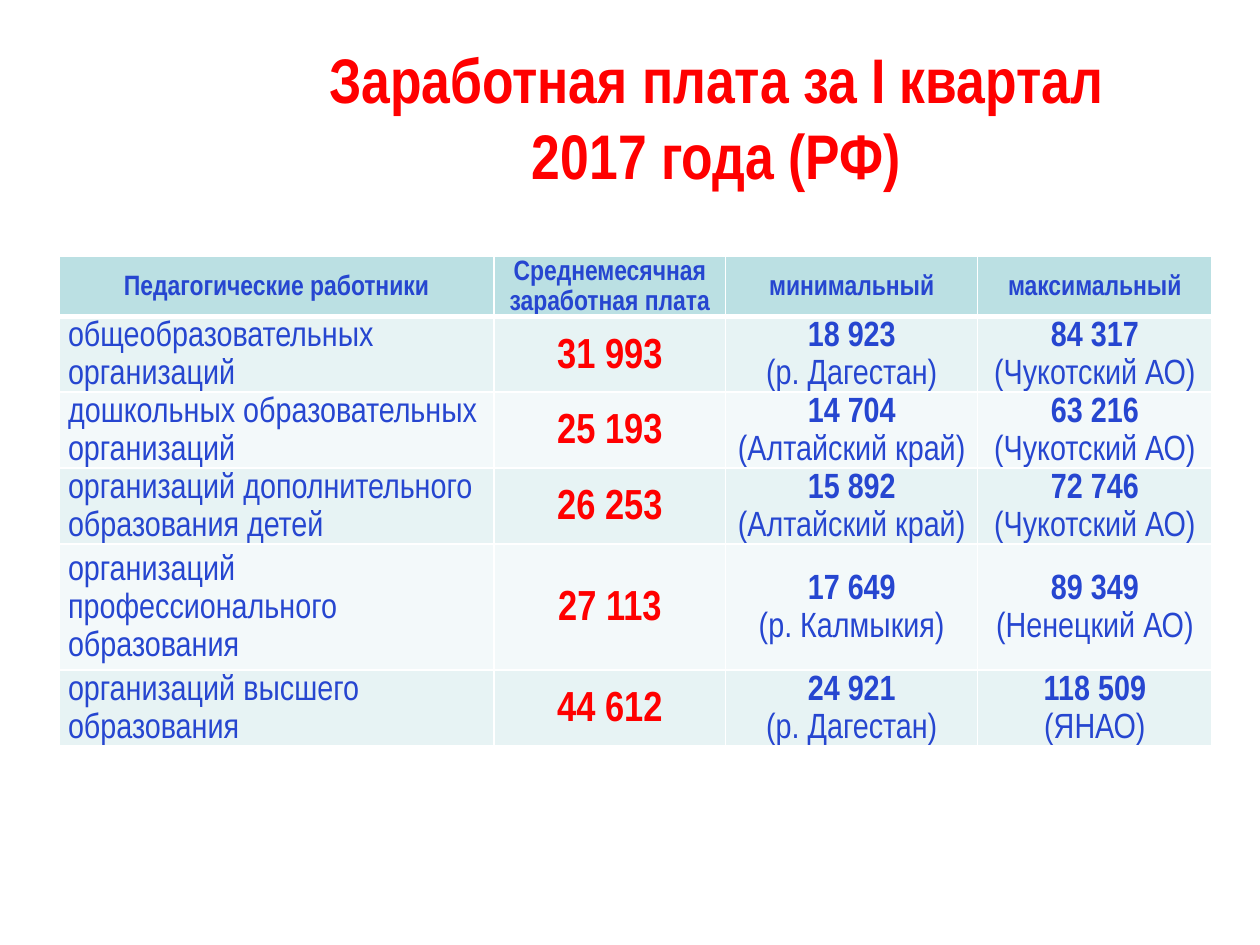
from dataclasses import dataclass

from lxml import etree
from pptx import Presentation
from pptx.dml.color import RGBColor
from pptx.enum.text import MSO_ANCHOR, PP_ALIGN
from pptx.oxml.ns import qn
from pptx.util import Inches, Pt

CENTER, LEFT, MIDDLE = PP_ALIGN.CENTER, PP_ALIGN.LEFT, MSO_ANCHOR.MIDDLE


@dataclass(frozen=True)
class Theme:
    font: str = "Arial Narrow"
    accent: str = "FF0000"
    ink: str = "2646D0"
    border: str = "FFFFFF"
    header_fill: str = "BBE0E3"
    band_fills: tuple = ("E7F3F4", "F3F9FA")
    title_size: int = 36
    header_size: int = 16
    body_size: int = 20
    average_size: int = 24
    spacing: float = 1.15
    thin: int = 1
    thick: int = 3


THEME = Theme()

TITLE_LINES = ("Заработная плата за I квартал", "2017 года (РФ)")
HEADERS = ("Педагогические работники", "Среднемесячная заработная плата", "минимальный", "максимальный")
SALARIES = (
    ("общеобразовательных организаций", "31 993",
     ("18 923", "(р. Дагестан)"), ("84 317 ", "(Чукотский АО)")),
    ("дошкольных образовательных организаций", "25 193",
     ("14 704 ", "(Алтайский край)"), ("63 216", "(Чукотский АО)")),
    ("организаций дополнительного образования детей", "26 253",
     ("15 892 ", "(Алтайский край)"), ("72 746", "(Чукотский АО)")),
    ("организаций профессионального образования", "27 113",
     ("17 649", "(р. Калмыкия)"), ("89 349", "(Ненецкий АО)")),
    ("организаций высшего образования", "44 612",
     ("24 921", "(р. Дагестан)"), ("118 509", "(ЯНАО)")),
)
COLUMN_WIDTHS = (3.45, 1.84, 2, 1.86)
ROW_HEIGHTS = (0.41, 0.41, 0.41, 0.41, 1, 0.25)


def add_run(paragraph, text, size, color, bold):
    run = paragraph.add_run()
    run.text = text
    run.font.name = THEME.font
    run.font.size = Pt(size)
    run.font.bold = bold
    run.font.color.rgb = RGBColor.from_string(color)


def add_title(slide):
    title = slide.shapes.title
    title.left, title.top, title.width, title.height = map(Inches, (1.87, 0.3, 7.63, 1.25))
    title.text_frame.vertical_anchor = MIDDLE
    heading = title.text_frame.paragraphs[0]
    heading.alignment = CENTER
    for index, line in enumerate(TITLE_LINES):
        if index:
            heading.add_line_break()
        add_run(heading, line, THEME.title_size, THEME.accent, True)


def set_borders(cell, top, bottom):
    properties = cell._tc.get_or_add_tcPr()
    widths = {"a:lnL": THEME.thin, "a:lnR": THEME.thin, "a:lnT": top, "a:lnB": bottom}
    for position, (side, width) in enumerate(widths.items()):
        line = etree.Element(qn(side), w=str(Pt(width)))
        fill = etree.SubElement(line, qn("a:solidFill"))
        etree.SubElement(fill, qn("a:srgbClr"), val=THEME.border)
        properties.insert(position, line)


def format_cell(cell, fill, top, bottom):
    cell.fill.solid()
    cell.fill.fore_color.rgb = RGBColor.from_string(fill)
    cell.vertical_anchor = MIDDLE
    cell.margin_left = cell.margin_right = Inches(0.07)
    cell.margin_top = cell.margin_bottom = 0
    set_borders(cell, top, bottom)


def write_cell(cell, paragraphs, size, color=THEME.ink, alignment=CENTER):
    frame = cell.text_frame
    for index, runs in enumerate(paragraphs):
        paragraph = frame.add_paragraph() if index else frame.paragraphs[0]
        paragraph.alignment = alignment
        paragraph.line_spacing = THEME.spacing
        for text, bold in runs:
            add_run(paragraph, text, size, color, bold)


def write_limit(cell, amount, region):
    runs = [(amount, True), (region, False)]
    paragraphs = [runs] if amount.endswith(" ") else [[run] for run in runs]
    write_cell(cell, paragraphs, THEME.body_size)


def add_salary_table(slide):
    frame = slide.shapes.add_table(
        len(ROW_HEIGHTS), len(COLUMN_WIDTHS),
        Inches(0.47), Inches(2.03), Inches(sum(COLUMN_WIDTHS)), Inches(4.83))
    table = frame.table
    for column, width in zip(table.columns, COLUMN_WIDTHS):
        column.width = Inches(width)
    for row, height in zip(table.rows, ROW_HEIGHTS):
        row.height = Inches(height)
    frame.height = Inches(4.83)

    for cell, header in zip(table.rows[0].cells, HEADERS):
        format_cell(cell, THEME.header_fill, THEME.thin, THEME.thick)
        write_cell(cell, [[(header, True)]], THEME.header_size)

    for index, (staff, average, lowest, highest) in enumerate(SALARIES):
        cells = list(table.rows[index + 1].cells)
        for cell in cells:
            format_cell(cell, THEME.band_fills[index % 2],
                        THEME.thin if index else THEME.thick, THEME.thin)
        write_cell(cells[0], [[(staff, False)]], THEME.body_size, alignment=LEFT)
        write_cell(cells[1], [[(average, True)]], THEME.average_size, THEME.accent)
        write_limit(cells[2], *lowest)
        write_limit(cells[3], *highest)


def main():
    presentation = Presentation()
    presentation.slide_width, presentation.slide_height = Inches(10), Inches(7.5)
    slide = presentation.slides.add_slide(presentation.slide_layouts[5])
    add_title(slide)
    add_salary_table(slide)
    presentation.save("out.pptx")


if __name__ == "__main__":
    main()
